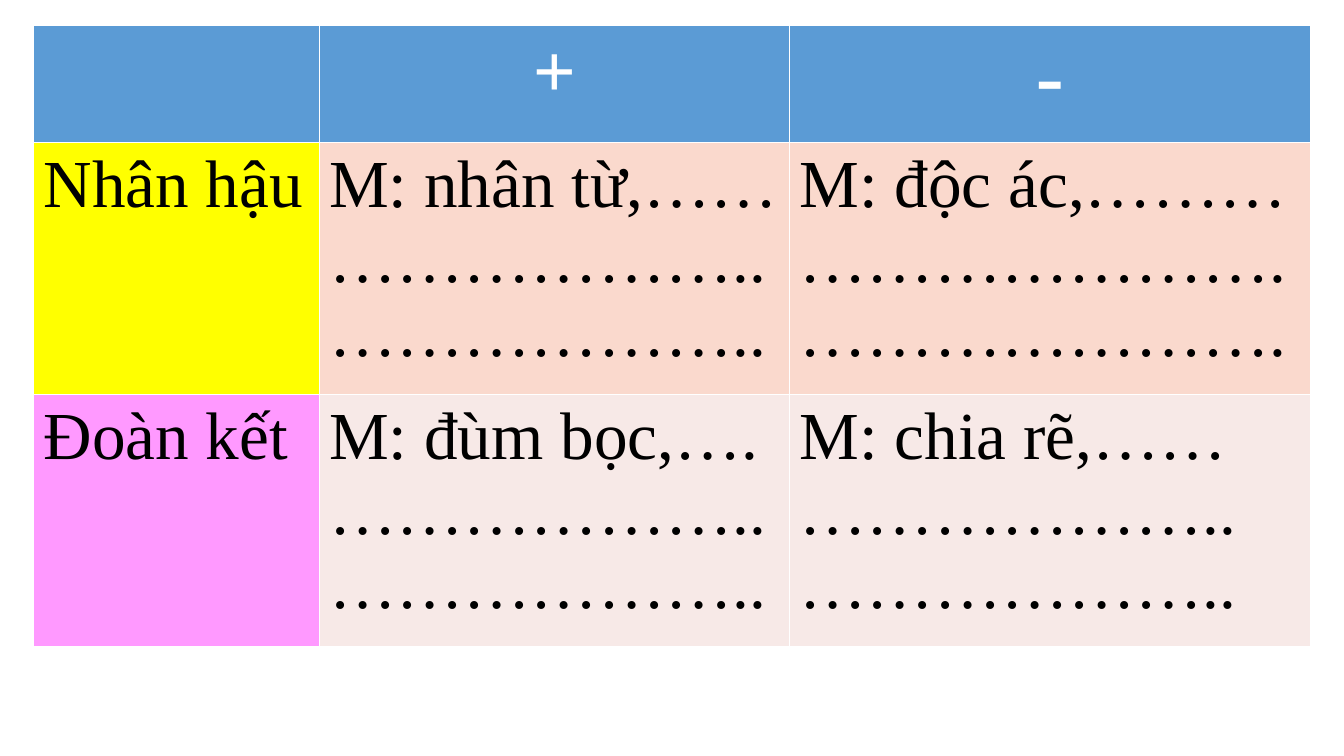
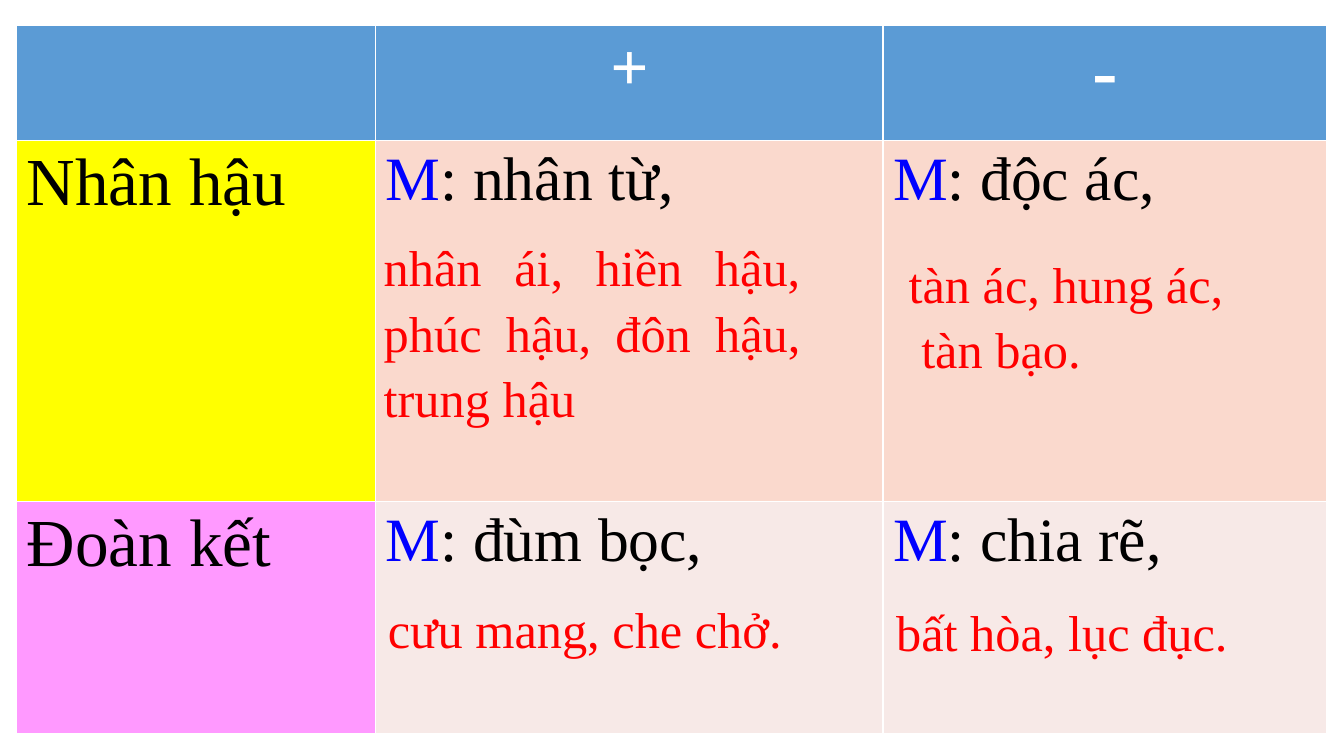
from dataclasses import dataclass

from pptx import Presentation
from pptx.dml.color import RGBColor
from pptx.enum.text import MSO_AUTO_SIZE, PP_ALIGN
from pptx.util import Pt

LEFT, MID, JUST = PP_ALIGN.LEFT, PP_ALIGN.CENTER, PP_ALIGN.JUSTIFY
GROW = MSO_AUTO_SIZE.SHAPE_TO_FIT_TEXT
PX = 9525
FONT = "Times New Roman"
WHITE, BLACK, RED, BLUE = "FFFFFF", "000000", "FF0000", "0000FF"
HEAD = "5B9BD5"
LABELS = (("Nhân hậu", "FFFF00", "FAD9CD"), ("Đoàn kết", "FF99FF", "F7E9E7"))
DOTS = "……………….."
LONG = "…………………."


@dataclass
class Style:
    size: int
    color: str = BLACK
    align: PP_ALIGN = LEFT
    bold: bool = False
    lead: str = ""
    space: float = 1.0


@dataclass
class Grid:
    left: int
    top: int
    cols: tuple[int, ...]
    rows: tuple[int, ...]
    signs: tuple[int, int]
    body: Style
    words: tuple[tuple[tuple[str, ...], ...], ...]


@dataclass
class Note:
    left: int
    top: int
    width: int
    height: int
    lines: tuple[str, ...]
    align: PP_ALIGN = JUST


def rgb(code: str) -> RGBColor:
    return RGBColor.from_string(code)


def write(frame, lines: tuple[str, ...], style: Style) -> None:
    for i, line in enumerate(lines):
        para = frame.add_paragraph() if i else frame.paragraphs[0]
        para.alignment = style.align
        para.line_spacing = style.space
        para.font.name = FONT
        para.font.size = Pt(style.size)
        para.font.bold = style.bold
        para.font.color.rgb = rgb(style.color)
        if style.lead:
            first = para.add_run()
            first.text = line[0]
            first.font.color.rgb = rgb(style.lead)
            line = line[1:]
        para.add_run().text = line


def paint(cell, fill: str, lines: tuple[str, ...], style: Style) -> None:
    cell.fill.solid()
    cell.fill.fore_color.rgb = rgb(fill)
    write(cell.text_frame, lines, style)


def draw_grid(slide, grid: Grid) -> None:
    box = (grid.left, grid.top, sum(grid.cols), sum(grid.rows))
    table = slide.shapes.add_table(
        len(grid.rows), len(grid.cols), *(n * PX for n in box)).table
    for col, width in zip(table.columns, grid.cols):
        col.width = width * PX
    for row, height in zip(table.rows, grid.rows):
        row.height = height * PX
    paint(table.cell(0, 0), HEAD, (), Style(18))
    for c, (sign, size) in enumerate(zip("+-", grid.signs), 1):
        paint(table.cell(0, c), HEAD, (sign,), Style(size, WHITE, MID, True))
    for r, ((label, tint, pale), cells) in enumerate(zip(LABELS, grid.words), 1):
        paint(table.cell(r, 0), tint, (label,), Style(48))
        for c, lines in enumerate(cells, 1):
            paint(table.cell(r, c), pale, lines, grid.body)


def draw_note(slide, note: Note) -> None:
    box = (note.left, note.top, note.width, note.height)
    frame = slide.shapes.add_textbox(*(n * PX for n in box)).text_frame
    frame.word_wrap = True
    frame.auto_size = GROW
    write(frame, note.lines, Style(36, RED, note.align, space=1.08))


TASK = Grid(
    32, 24, (272, 448, 496), (112, 240, 240), (54, 60), Style(48),
    ((("M: nhân từ,……", DOTS, DOTS), ("M: độc ác,………", LONG, LONG)),
     (("M: đùm bọc,….", DOTS, DOTS), ("M: chia rẽ,……", DOTS, DOTS))))
KEY = Grid(
    16, 24, (342, 483, 423), (110, 344, 221), (48, 54),
    Style(44, align=JUST, lead=BLUE),
    ((("M: nhân từ,",), ("M: độc ác,",)),
     (("M: đùm bọc,",), ("M: chia rẽ,",))))
NOTES = (
    Note(356, 216, 416, 184, ("nhân ái, hiền hậu, phúc hậu, đôn hậu, trung hậu",)),
    Note(856, 232, 392, 184, ("tàn ác, hung ác,", " tàn bạo."), LEFT),
    Note(360, 560, 416, 68, ("cưu mang, che chở.",)),
    Note(844, 563, 416, 68, ("bất hòa, lục đục.",)),
)


def main() -> None:
    deck = Presentation()
    deck.slide_width, deck.slide_height = 1280 * PX, 720 * PX
    for grid, notes in ((TASK, ()), (KEY, NOTES)):
        slide = deck.slides.add_slide(deck.slide_layouts[6])
        draw_grid(slide, grid)
        for note in notes:
            draw_note(slide, note)
    deck.save("out.pptx")


if __name__ == "__main__":
    main()
